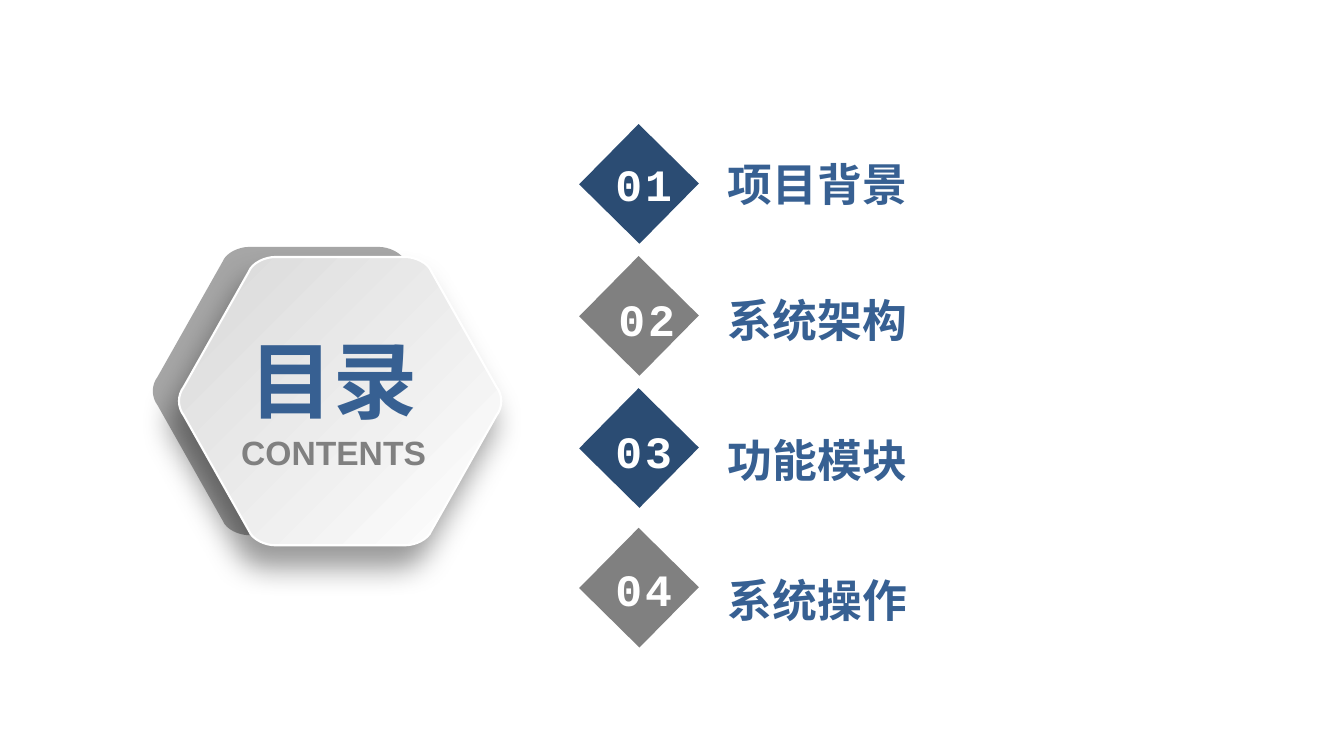
from lxml import etree
from pptx import Presentation
from pptx.dml.color import RGBColor
from pptx.enum.shapes import MSO_SHAPE
from pptx.enum.text import MSO_ANCHOR, PP_ALIGN
from pptx.oxml import parse_xml
from pptx.oxml.ns import qn
from pptx.util import Inches, Pt

RECT = MSO_SHAPE.RECTANGLE
TOP, MIDDLE = MSO_ANCHOR.TOP, MSO_ANCHOR.MIDDLE
LEFT, CENTER = PP_ALIGN.LEFT, PP_ALIGN.CENTER
COLS, ROWS = 160, 90
HAN = "Noto Sans CJK SC"
COLORS = {"navy": "2B4C73", "blue": "376092", "gray": "808080",
          "back": "A6A6A6", "pale": "D9D9D9", "white": "FFFFFF"}
ITEMS = [
    ("01 ", "项目背景", "navy", 16.85, 0, 0.95, -0.89),
    ("02 ", "系统架构", "gray", 32.57, 0.36, 1.39, -0.41),
    ("03 ", "功能模块", "navy", 48.29, 0, 1.39, 0.55),
    ("04 ", "系统操作", "gray", 64.92, 0, 1.1, 0.6),
]
CORNER = [(0.7, 0), (0.73, 0), (0.77, 0.02), (0.78, 0.05)]
TIP = [(0.98, 0.45), (1, 0.48), (1, 0.52), (0.98, 0.55)]
SHADOW = """<a:effectLst xmlns:a="http://schemas.openxmlformats.org/drawingml/2006/main">
<a:outerShdw blurRad="266700" dist="203200" dir="6780000" algn="tl" rotWithShape="0">
<a:srgbClr val="000000"><a:alpha val="40000"/></a:srgbClr></a:outerShdw></a:effectLst>"""


def cell(n):
    """Return the length of n grid cells; cells are square."""
    return Inches(n * 7.5 / ROWS)


def color(name):
    """Return a named palette color."""
    return RGBColor.from_string(COLORS[name])


def write(slide, text, box, size, hue, font="Arial", align=CENTER,
          anchor=TOP, wrap=True, lead=None, gap=None):
    """Place one bold line of text in a box of grid cells."""
    frame = slide.shapes.add_textbox(*map(cell, box)).text_frame
    frame.word_wrap, frame.vertical_anchor = wrap, anchor
    frame.margin_left = frame.margin_right = cell(1.6)
    frame.margin_top = frame.margin_bottom = cell(0.8)
    para = frame.paragraphs[0]
    para.alignment = align
    if lead:
        para.line_spacing = lead
    run = para.add_run()
    run.text = text
    run.font.size, run.font.bold, run.font.name = Pt(size), True, font
    run.font.color.rgb = color(hue)
    props = run.font._element
    etree.SubElement(props, qn("a:ea")).set("typeface", HAN)
    if gap:
        props.set("spc", str(gap * 100))


def bend(shape):
    """Turn the three segments of each corner into one cubic curve."""
    track = shape._element.spPr.find(".//" + qn("a:path"))
    lines = track.findall(qn("a:lnTo"))
    for i in range(0, len(lines), 4):
        arc = etree.Element(qn("a:cubicBezTo"))
        lines[i].addprevious(arc)
        for line in lines[i:i + 3]:
            arc.append(line[0])
            track.remove(line)


def hexagon(slide, x, y, w, h):
    """Draw a hexagon with rounded corners in a box."""
    half = CORNER + TIP + [(u, 1 - v) for u, v in reversed(CORNER)]
    ring = half + [(1 - u, 1 - v) for u, v in half]
    spots = [(cell(x + u * w), cell(y + v * h)) for u, v in ring]
    pen = slide.shapes.build_freeform(*spots[0])
    pen.add_line_segments(spots[1:], close=True)
    shape = pen.convert_to_shape()
    bend(shape)
    shape.shadow.inherit = False
    return shape


def badge(slide, x, y, w, h):
    """Draw the stacked hexagons and their heading."""
    back = hexagon(slide, x, y, w, h)
    back.fill.solid()
    back.fill.fore_color.rgb = color("back")
    back.line.fill.background()
    x, y = x + 3.12, y + 1.2
    front = hexagon(slide, x, y, w, h)
    front.line.color.rgb, front.line.width = color("white"), Pt(1.5)
    front.fill.gradient()
    front.fill.gradient_angle = 315
    for stop, hue, spot in zip(front.fill.gradient_stops, ("pale", "white"), (0, 1)):
        stop.color.rgb, stop.position = color(hue), spot
    props = front._element.spPr
    props.replace(props.find(qn("a:effectLst")), parse_xml(SHADOW))
    write(slide, "目录", (x + 4.2, y + 7.68, 28.68, 13.68), 60, "blue")
    write(slide, "CONTENTS", (x + 4.2, y + 19.9, 28.8, 6.72), 24, "gray", anchor=MIDDLE)


def item(slide, x, y, side, num, label, hue, shift, drop, rise):
    """Draw one entry: a diamond, its number and its label."""
    gem = slide.shapes.add_shape(RECT, *map(cell, (x, y, side, side)))
    gem.rotation = 314.6
    gem.shadow.inherit = False
    gem.fill.solid()
    gem.fill.fore_color.rgb = color(hue)
    gem.line.fill.background()
    write(slide, num, (x - 0.12 + shift, y + drop, 11.76, 8.04), 32, "white",
          font="Courier New", wrap=False, gap=2)
    write(slide, label, (x + 13.98, y + rise, 46.68, 9.24), 32, "blue",
          font=HAN, align=LEFT, lead=1.3)


def main():
    """Build the contents slide and save it."""
    deck = Presentation()
    deck.slide_width, deck.slide_height = cell(COLS), cell(ROWS)
    slide = deck.slides.add_slide(deck.slide_layouts[6])
    badge(slide, 18, 29.4, 38.76, 34.32)
    for num, label, hue, top, shift, drop, rise in ITEMS:
        item(slide, 71.04, top, 10.08, num, label, hue, shift, drop, rise)
    deck.save("out.pptx")


if __name__ == "__main__":
    main()
